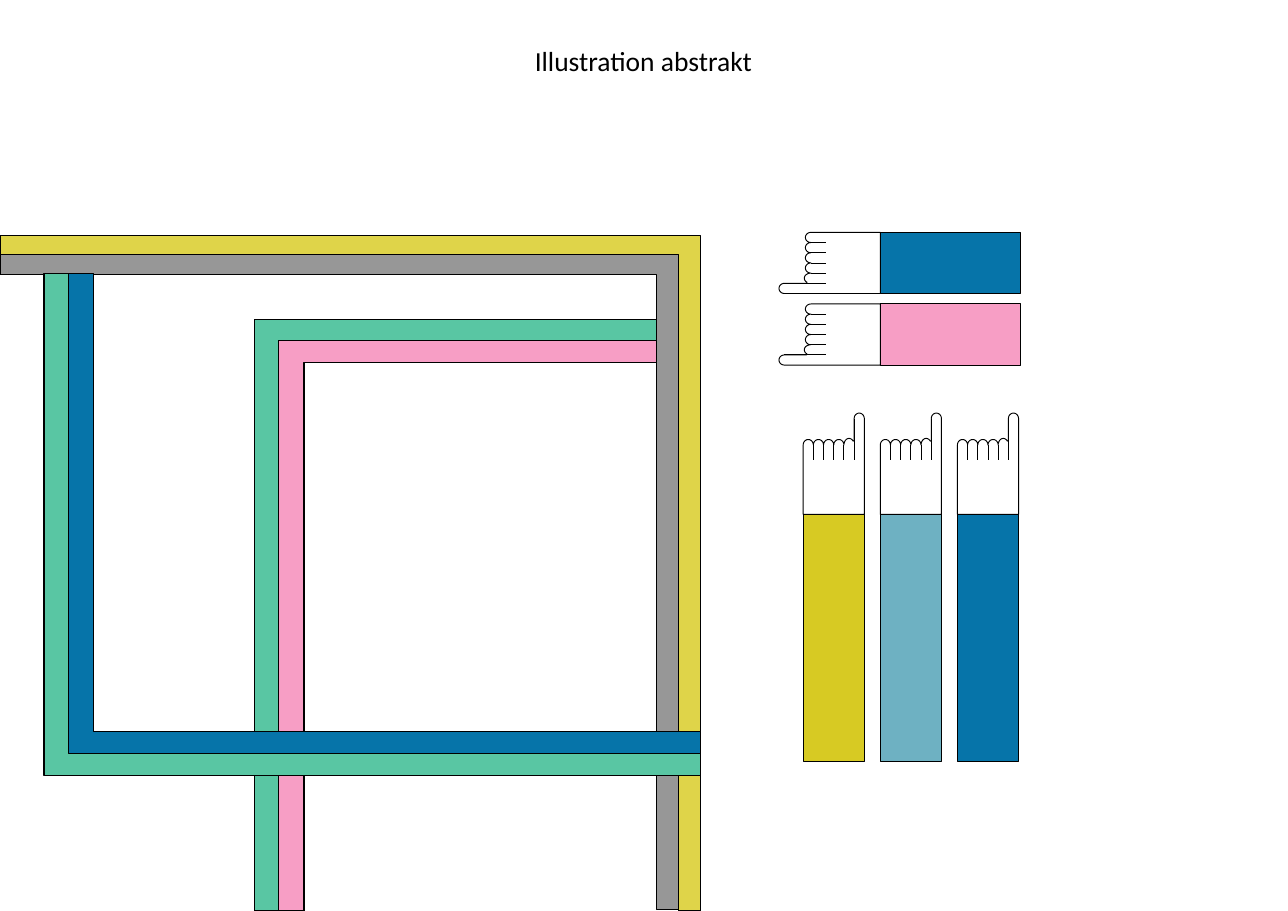
from math import cos, pi, sin

from lxml.etree import SubElement
from pptx import Presentation
from pptx.dml.color import RGBColor as RGB
from pptx.enum.shapes import MSO_CONNECTOR as LINK, MSO_SHAPE as FORM
from pptx.enum.text import MSO_ANCHOR as ANCHOR, PP_ALIGN as ALIGN
from pptx.oxml.ns import qn
from pptx.util import Inches, Pt

COLORS = {
    "black": "000000", "green": "59C6A3", "pink": "F79EC5", "gray": "979797",
    "sand": "DFD449", "blue": "0674A9", "lime": "D7CA23", "teal": "6EB1C2",
}
TITLE = {"size": Pt(18), "name": "Calibri", "bold": False}
FRAME = {"margin_left": 0, "margin_top": 0, "margin_right": 0, "margin_bottom": 0,
         "vertical_anchor": ANCHOR.MIDDLE, "word_wrap": True}
PEN = 0.63

# Hand measures: across the fingers, and along from the thumb tip
STEP = 0.0925
BASE, ROOT, WRIST = 0.29, 0.43, 0.92
TIP = 0.05
WIDTH = 6 * STEP


def color(key):
    return RGB.from_string(COLORS[key])


def apply(item, values):
    for key, value in values.items():
        setattr(item, key, value)


def paint(shape, fill, pen):
    shape.shadow.inherit = False
    if fill:
        shape.fill.solid()
        shape.fill.fore_color.rgb = color(fill)
    else:
        shape.fill.background()
    shape.line.color.rgb = color("black")
    shape.line.width = Pt(pen)


def add_title(slide, text):
    title = slide.shapes.title
    box = {"left": 0.8, "top": 0.35, "width": 10.08, "height": 0.39}
    apply(title, {key: Inches(value) for key, value in box.items()})
    frame = title.text_frame
    frame.text = text
    apply(frame, FRAME)
    line = frame.paragraphs[0]
    line.alignment = ALIGN.CENTER
    apply(line.font, TITLE)
    line.font.color.rgb = color("black")


def add_form(group, points, fill=None, pen=0):
    spots = [(Inches(x), Inches(y)) for x, y in points]
    maker = group.shapes.build_freeform(*spots[0], scale=1.0)
    maker.add_line_segments(spots[1:], close=True)
    paint(maker.convert_to_shape(), fill, pen)


def add_line(group, start, end):
    ends = [Inches(value) for value in (*start, *end)]
    line = group.shapes.add_connector(LINK.STRAIGHT, *ends)
    line.line.color.rgb = color("black")
    line.line.width = Pt(PEN)
    SubElement(line._element.spPr, qn("a:effectLst"))


def arc(slot, base, rise, turn=1.0):
    """Rounded finger end over one slot, as points; turn 1 is a half round."""
    mid, count = (slot + 0.5) * STEP, 12
    angles = [pi * turn * i / count for i in range(count + 1)]
    return [(mid - STEP / 2 * cos(a), base - rise * sin(a)) for a in angles]


def outline():
    points = [(0, WRIST)]
    for slot in range(4):
        points += arc(slot, BASE, 0.05)
    points += arc(4, BASE, 0.06, 0.8)
    points += [(5 * STEP, 0.25)] + arc(5, TIP, TIP)
    return points + [(WIDTH, WRIST)]


def add_arm(slide, left, top, length, fill, flat=False):
    group = slide.shapes.add_group_shape()

    def place(across, along):
        shift = (along, across) if flat else (across, along)
        return left + shift[0], top + shift[1]

    # Hand and finger lines
    add_form(group, [place(*point) for point in outline()], pen=PEN)
    for slot in range(1, 6):
        start = TIP if slot == 5 else BASE
        add_line(group, place(slot * STEP, start), place(slot * STEP, ROOT))

    # Sleeve
    size = (length, WIDTH) if flat else (WIDTH, length)
    box = [Inches(value) for value in (*place(0, WRIST), *size)]
    paint(group.shapes.add_shape(FORM.RECTANGLE, *box), fill, PEN)


def add_band(group, fill, start, bend, end, inner):
    """Bent band: start and end are its far edges, bend and inner its corners."""
    (x, y), (u, v) = bend, inner
    points = [(start, y), (x, y), (x, end), (u, end), (u, v), (start, v)]
    add_form(group, points, fill)


def main():
    deck = Presentation()
    deck.slide_width, deck.slide_height = Inches(11.69), Inches(8.27)
    slide = deck.slides.add_slide(deck.slide_layouts[5])
    add_title(slide, "Illustration abstrakt")

    # Upright arms
    for i, fill in enumerate(("lime", "teal", "blue")):
        add_arm(slide, 7.29 + 0.7 * i, 3.75, 2.24, fill)

    # Flat arms
    for i, fill in enumerate(("blue", "pink")):
        add_arm(slide, 7.07, 2.11 + 0.65 * i, 1.27, fill, flat=True)

    # Bent bands, from back to front
    bands = (
        ("green", 5.97, (2.31, 2.9), 8.27, (2.54, 3.1)),
        ("pink", 5.97, (2.53, 3.09), 8.27, (2.76, 3.29)),
        ("gray", 0, (6.16, 2.31), 8.26, (5.96, 2.49)),
        ("sand", 0, (6.36, 2.14), 8.27, (6.16, 2.31)),
        ("green", 6.36, (0.4, 7.04), 2.48, (0.63, 6.84)),
        ("blue", 6.36, (0.62, 6.84), 2.48, (0.85, 6.64)),
    )
    group = slide.shapes.add_group_shape()
    for band in bands:
        add_band(group, *band)

    deck.save("out.pptx")


if __name__ == "__main__":
    main()
